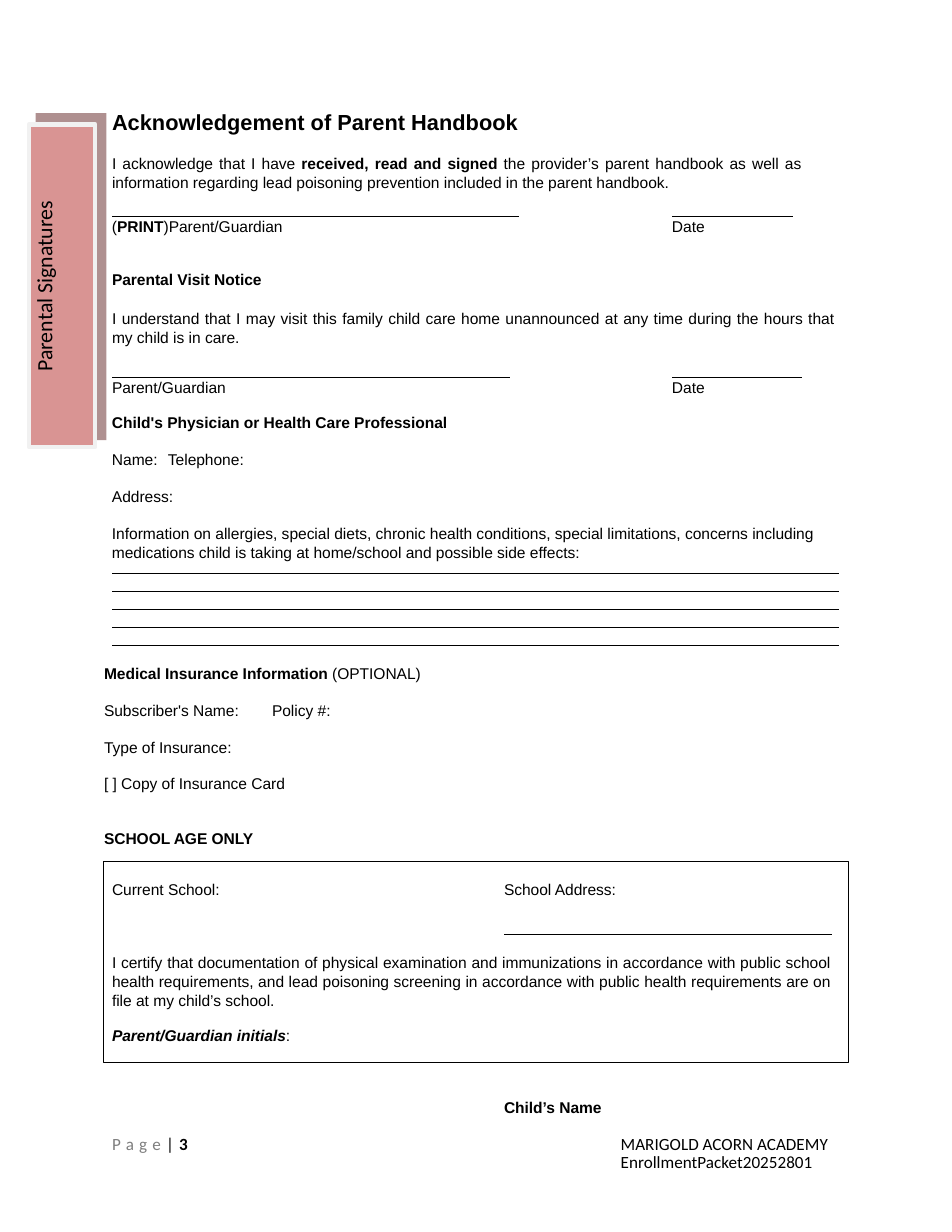
"""Build the parent handbook acknowledgement and signature page."""
from lxml import etree
from pptx import Presentation
from pptx import util as u
from pptx.dml import color
from pptx.enum import shapes, text
from pptx.oxml import ns

THEME = {
    "ink": "000000", "muted": "7E7E7E", "tab": "D99493", "tab_edge": "F1F1F1", "shadow": "612322",
    "body_font": "Arial", "accent_font": "Calibri",
    "title": 14, "body": 10, "footer": 11, "rule": 0.63,
}
LEFT, RIGHT_COLUMN = 72, 432
JUSTIFY = {"alignment": text.PP_ALIGN.JUSTIFY}
EXACT = {"line_spacing": u.Pt(11.5)}
BOLD, BOLD_ITALIC = {"bold": True}, {"bold": True, "italic": True}
FOOTER = {"name": THEME["accent_font"], "size": u.Pt(THEME["footer"])}

TITLE = [(0, [("Acknowledgement of Parent Handbook", {"bold": True, "size": u.Pt(THEME["title"])})], {})]
ACKNOWLEDGEMENT = [(0, [
    ("I acknowledge that I have ", {}),
    ("received, read and signed ", BOLD),
    ("the provider’s parent handbook as well as information regarding lead poisoning "
     "prevention included in the parent handbook.", {}),
], JUSTIFY)]
VISIT = [
    (0, [("Parental Visit Notice", BOLD)], {}),
    (12.9, [("I understand that I may visit this family child care home unannounced at any time "
             "during the hours that my child is in care.", {})], JUSTIFY),
]
PHYSICIAN = [
    (0, [("Child's Physician or Health Care Professional", BOLD)], {}),
    (11.6, [("Name:\tTelephone:", {})], {}),
    (11.6, [("Address:", {})], {}),
    (12.2, [("Information on allergies, special diets, chronic health conditions, special limitations, "
             "concerns including medications child is taking at home/school and possible side effects:", {})], {}),
]
INSURANCE = [
    (0, [("Medical Insurance Information ", BOLD), ("(OPTIONAL)", {})], {}),
    (11.6, [("Subscriber's Name:\tPolicy #:", {})], {}),
    (11.6, [("Type of Insurance:", {})], {}),
    (11.6, [("[ ] Copy of Insurance Card", {})], {}),
    (23.2, [("SCHOOL AGE ONLY", BOLD)], {}),
]
CERTIFICATION = [
    (0, [("I certify that documentation of physical examination and immunizations in accordance with "
          "public school health requirements, and lead poisoning screening in accordance with public "
          "health requirements are on file at my child’s school.", {})], JUSTIFY),
    (11, [("Parent/Guardian initials", BOLD_ITALIC), (":", {})], {}),
]
PAGE_NUMBER = [(0, [
    ("P a g e ", {**FOOTER, "color": THEME["muted"], "spacing": 40}),
    ("| ", {**FOOTER, "spacing": 40}),
    ("3", {**FOOTER, **BOLD}),
], EXACT)]
ACADEMY = [(0, [("MARIGOLD ACORN ACADEMY EnrollmentPacket20252801", FOOTER)], EXACT)]
SIDE_LABEL = [(0, [("Parental Signatures",
                    {"name": THEME["accent_font"], "size": u.Pt(THEME["title"])})], {})]


def line(*runs):
    return [(0, list(runs), {})]


TEXT_BOXES = [
    (VISIT, LEFT, 172.1, 464, 48, None),
    (PHYSICIAN, LEFT, 264.2, 454, 94, 291.2),
    (INSURANCE, 66.9, 425.5, 435, 117, 277),
    (line(("Current School:", {})), LEFT, 564.5, 229, 14, None),
    (line(("School Address:", {})), 324, 564.5, 215, 14, None),
    (CERTIFICATION, LEFT, 611.2, 461.5, 60, None),
    (line(("Child’s Name", BOLD)), 324, 704.2, 190, 14, None),
    (line(("(", {}), ("PRINT", BOLD), (")Parent/Guardian", {})), LEFT, 137.8, 133, 14, None),
    (line(("Date", {})), RIGHT_COLUMN, 137.8, 30, 14, None),
    (line(("Parent/Guardian", {})), LEFT, 241.2, 90, 14, None),
    (line(("Date", {})), RIGHT_COLUMN, 241.2, 30, 14, None),
    (PAGE_NUMBER, LEFT, 728.6, 60, 13, None),
    (ACADEMY, 399, 728.6, 142, 25, None),
]
RULES = [
    (LEFT, 139, 261.4), (RIGHT_COLUMN, 139, 77.8),
    (LEFT, 242.6, 255.6), (RIGHT_COLUMN, 242.6, 83.5),
    *[(LEFT, 368.6 + 11.52 * row, 467.3) for row in range(5)],
    (324, 600.5, 211),
]


def apply(target, values):
    for name, value in values.items():
        setattr(target, name, value)


def rgb(name):
    return color.RGBColor.from_string(name)


def write(shape, paragraphs, tab=None, top=1.5, left=0, indent=0):
    frame = shape.text_frame
    apply(frame, {
        "word_wrap": True, "auto_size": text.MSO_AUTO_SIZE.NONE,
        "vertical_anchor": text.MSO_ANCHOR.TOP, "margin_left": u.Pt(left),
        "margin_top": u.Pt(top), "margin_right": 0, "margin_bottom": 0,
    })
    for index, (space, runs, layout) in enumerate(paragraphs):
        paragraph = frame.add_paragraph() if index else frame.paragraphs[0]
        apply(paragraph, {"alignment": text.PP_ALIGN.LEFT, "space_before": u.Pt(space), **layout})
        properties = paragraph._p.get_or_add_pPr()
        properties.set("marL", str(u.Pt(indent)))
        properties.set("indent", "0")
        etree.SubElement(properties, ns.qn("a:buNone"))
        if tab:
            stops = etree.SubElement(properties, ns.qn("a:tabLst"))
            etree.SubElement(stops, ns.qn("a:tab"), pos=str(u.Pt(tab)), algn="l")
        for content, style in runs:
            run = paragraph.add_run()
            run.text = content
            values = {"name": THEME["body_font"], "size": u.Pt(THEME["body"]), "bold": False, **style}
            run.font.color.rgb = rgb(values.pop("color", THEME["ink"]))
            spacing = values.pop("spacing", 0)
            apply(run.font, values)
            if spacing:
                run._r.get_or_add_rPr().set("spc", str(spacing))


def place(shape, *box):
    apply(shape, dict(zip(("left", "top", "width", "height"), map(u.Pt, box))))


def add_rectangle(slide, box, fill=None, edge=None, weight=0.5):
    shape = slide.shapes.add_shape(shapes.MSO_SHAPE.RECTANGLE, *map(u.Pt, box))
    shape.shadow.inherit = False
    if fill:
        shape.fill.solid()
        shape.fill.fore_color.rgb = rgb(fill)
    else:
        shape.fill.background()
    if edge:
        shape.line.color.rgb = rgb(edge)
        shape.line.width = u.Pt(weight)
    else:
        shape.line.fill.background()
    return shape


def add_rule(slide, left, top, width):
    rule = slide.shapes.add_connector(
        shapes.MSO_CONNECTOR.STRAIGHT, *map(u.Pt, (left, top, left + width, top)))
    rule.line.color.rgb = rgb(THEME["ink"])
    rule.line.width = u.Pt(THEME["rule"])
    etree.SubElement(rule._element.spPr, ns.qn("a:effectLst"))


def main():
    presentation = Presentation()
    apply(presentation, {"slide_width": u.Pt(612), "slide_height": u.Pt(792)})
    slide = presentation.slides.add_slide(presentation.slide_layouts[1])
    title, body = slide.placeholders
    place(title, LEFT, 68.4, 470, 20)
    write(title, TITLE)
    place(body, LEFT, 97.5, 443, 26)
    write(body, ACKNOWLEDGEMENT)
    for paragraphs, left, top, width, height, tab in TEXT_BOXES:
        box = slide.shapes.add_textbox(*map(u.Pt, (left, top, width, height)))
        write(box, paragraphs, tab)
    for rule in RULES:
        add_rule(slide, *rule)
    add_rectangle(slide, (66.4, 553.9, 479.2, 128.9), edge=THEME["ink"])
    shadow = add_rectangle(slide, (23, 72.7, 45.4, 210.2), THEME["shadow"])
    fill = shadow._element.spPr.find(ns.qn("a:solidFill"))
    etree.SubElement(fill[0], ns.qn("a:alpha"), val="50000")
    side_tab = add_rectangle(slide, (18.7, 80, 42.5, 207.4), THEME["tab"], THEME["tab_edge"], 3)
    write(side_tab, SIDE_LABEL, top=0, left=1, indent=48.5)
    side_tab.text_frame._txBody.bodyPr.set("vert", "vert270")
    presentation.save("out.pptx")


if __name__ == "__main__":
    main()
